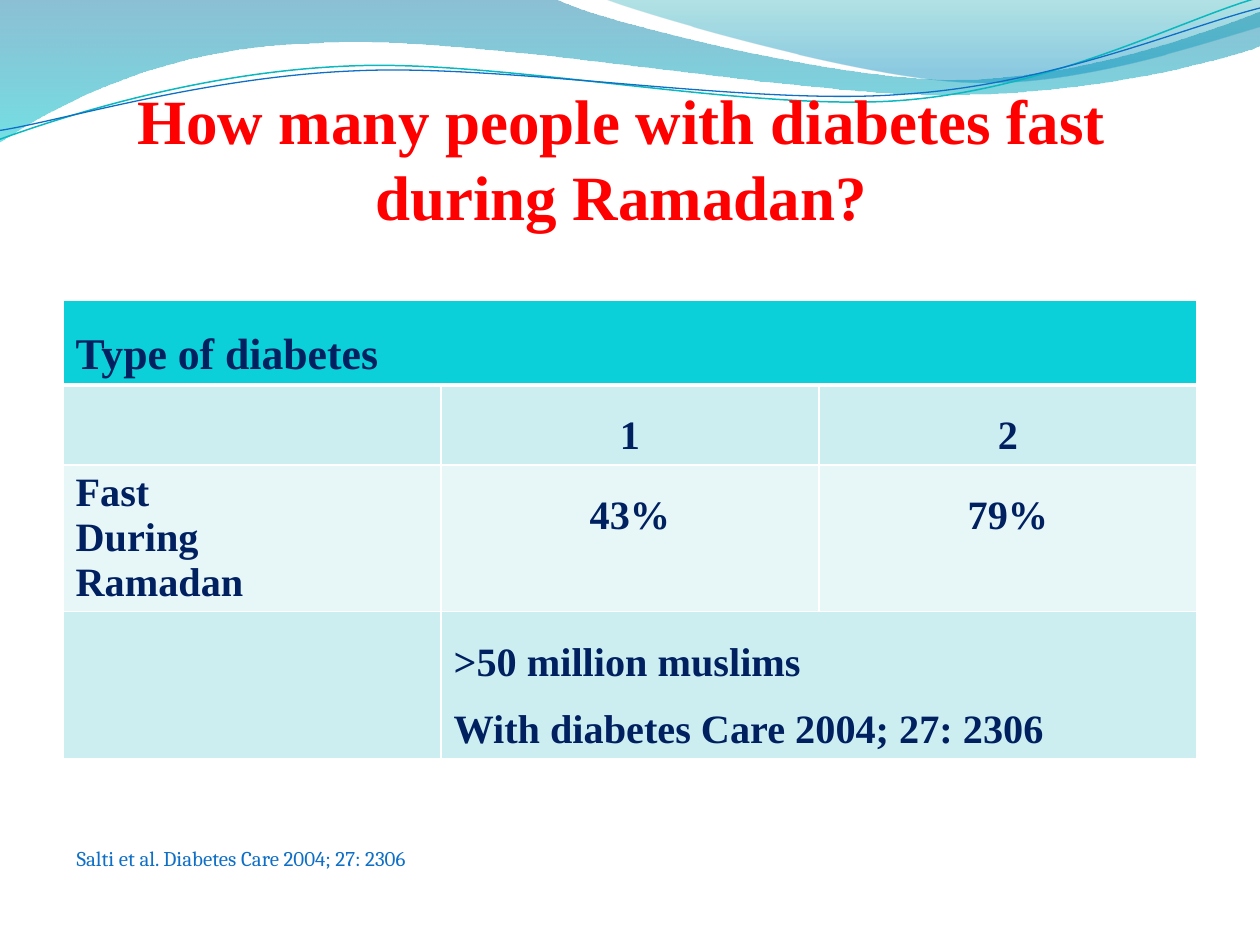
from lxml import etree
from pptx import Presentation
from pptx.dml.color import RGBColor
from pptx.enum.text import MSO_ANCHOR, MSO_AUTO_SIZE, PP_ALIGN
from pptx.oxml.ns import qn
from pptx.util import Inches, Pt

CENTER, LEFT = PP_ALIGN.CENTER, PP_ALIGN.LEFT
BOTTOM, FIXED = MSO_ANCHOR.BOTTOM, MSO_AUTO_SIZE.NONE
RED = RGBColor(0xFF, 0x00, 0x00)
NAVY = RGBColor(0x00, 0x20, 0x60)
BLUE = RGBColor(0x0F, 0x6F, 0xC6)
TEAL = RGBColor(0x0A, 0xB8, 0xBF)
CYAN = RGBColor(0x0B, 0xD0, 0xD9)
PALE = RGBColor(0xCC, 0xEE, 0xF1)
LIGHT = RGBColor(0xE7, 0xF7, 0xF8)
WHITE = RGBColor(0xFF, 0xFF, 0xFF)
DEEP = RGBColor(0x00, 0x74, 0xA1)
AQUA = RGBColor(0x00, 0xC6, 0xCF)
SEA = RGBColor(0x00, 0xA1, 0xA9)
SKY = RGBColor(0x00, 0x8B, 0xBF)
SERIF = "Times New Roman"
TILT = 357.3

BANDS = [
    ([(0, 0), (4.4, -0.01), (4.76, 0.17, 6.64, 0.63, 7.58, 0.63),
      (8.53, 0.63, 9.58, 0.26, 10, 0.09), (10.01, 0.36),
      (9.83, 0.44, 8.7, 0.76, 7.46, 0.75), (6.22, 0.75, 3.82, 0.28, 2.57, 0.34),
      (1.29, 0.36, 0.46, 0.83, -0.01, 1.13), (0, 0)],
     [(0, DEEP, 45), (100, AQUA, 55)]),
    ([(4.79, -0.01), (5.09, 0.11, 6.82, 0.62, 7.69, 0.65),
      (8.56, 0.69, 9.61, 0.32, 10, 0.21), (10, 0), (4.79, -0.01)],
     [(0, SEA, 30), (80, SKY, 45)]),
]
CURVES = [
    ([(-0.02, 0.87), (0.47, 0.72, 1.58, 0.41, 2.78, 0.42),
      (3.96, 0.42, 5.91, 0.93, 7.12, 0.9), (8.32, 0.87, 9.4, 0.36, 10, 0.22)],
     TEAL, 0.85),
    ([(-0.02, 0.8), (0.46, 0.75, 1.64, 0.45, 2.83, 0.46),
      (4.03, 0.46, 5.96, 0.89, 7.16, 0.85), (8.35, 0.83, 9.42, 0.42, 10.02, 0.3)],
     BLUE, 0.75),
]
ROWS = [
    (CYAN, 25, ["Type of diabetes", "", ""]),
    (PALE, 23, ["", "1", "2"]),
    (LIGHT, 23, ["Fast\nDuring\nRamadan", "43%", "79%"]),
    (PALE, 23, ["", ">50 million muslims\nWith diabetes Care 2004; 27: 2306", ""]),
]


def outline(slide, left, top, parts, close):
    """Draw a path whose six-number parts are Bezier curves."""
    first, *rest = [(Inches(x), Inches(y)) for part in parts
                    for x, y in zip(part[::2], part[1::2])]
    pen = slide.shapes.build_freeform(*first)
    pen.add_line_segments(rest, close=close)
    shape = pen.convert_to_shape(Inches(left), Inches(top))
    shape.shadow.inherit = False
    lines = iter(list(shape._element.iter(qn("a:lnTo"))))
    for part in parts[1:]:
        line = next(lines)
        if len(part) == 6:
            bend = etree.Element(qn("a:cubicBezTo"))
            line.addprevious(bend)
            for piece in (line, next(lines), next(lines)):
                bend.append(piece[0])
                piece.getparent().remove(piece)
    return shape


def shade(shape, stops):
    """Fill a shape from top to bottom with see-through colours."""
    shape.fill.background()
    old = shape._element.spPr.find(qn("a:noFill"))
    grad = etree.Element(qn("a:gradFill"), rotWithShape="1")
    group = etree.SubElement(grad, qn("a:gsLst"))
    for place, color, alpha in stops:
        stop = etree.SubElement(group, qn("a:gs"), pos=str(place * 1000))
        tint = etree.SubElement(stop, qn("a:srgbClr"), val=str(color))
        etree.SubElement(tint, qn("a:alpha"), val=str(alpha * 1000))
    etree.SubElement(grad, qn("a:lin"), ang="5400000", scaled="0")
    old.getparent().replace(old, grad)


def add_waves(slide, left, top):
    """Draw the bands and thin curves along the top edge."""
    for parts, stops in BANDS:
        band = outline(slide, left, top, parts, True)
        shade(band, stops)
        band.line.fill.background()
    for parts, color, width in CURVES:
        curve = outline(slide, left, top, parts, False)
        curve.rotation = TILT
        curve.fill.background()
        curve.line.color.rgb = color
        curve.line.width = Pt(width)


def style(para, size, color, name, bold):
    """Set the font of every run in a paragraph."""
    for run in para.runs:
        font = run.font
        font.size, font.name, font.bold = Pt(size), name, bold
        font.color.rgb = color


def add_title(slide, left, top, width, height):
    """Place the title in front of the waves."""
    title = slide.shapes.title
    title.left, title.top = Inches(left), Inches(top)
    title.width, title.height = Inches(width), Inches(height)
    frame = title.text_frame
    frame.text = "How many people with diabetes fast during Ramadan?"
    frame.auto_size, frame.vertical_anchor = FIXED, BOTTOM
    frame.margin_left = frame.margin_right = frame.margin_bottom = 0
    para = frame.paragraphs[0]
    para.alignment = CENTER
    style(para, 36, RED, SERIF, True)
    slide.shapes._spTree.append(title._element)


def edge(cell, over, under):
    """Draw white cell borders, with the given widths above and below."""
    props = cell._tc.get_or_add_tcPr()
    for spot, (side, width) in enumerate(
            [("L", 1), ("R", 1), ("T", over), ("B", under)]):
        line = etree.Element(qn(f"a:ln{side}"), w=str(Pt(width)))
        fill = etree.SubElement(line, qn("a:solidFill"))
        etree.SubElement(fill, qn("a:srgbClr"), val=str(WHITE))
        props.insert(spot, line)


def add_grid(slide, left, top, width, height):
    """Place the table of fasting rates by type of diabetes."""
    holder = slide.shapes.add_table(len(ROWS), 3, Inches(left), Inches(top),
                                    Inches(width), Inches(height))
    table = holder.table
    for r, (color, size, words) in enumerate(ROWS):
        table.rows[r].height = Inches(0.41)
        for c, text in enumerate(words):
            cell = table.cell(r, c)
            cell.fill.solid()
            cell.fill.fore_color.rgb = color
            edge(cell, 3 if r == 1 else 1, 3 if r == 0 else 1)
            if not text:
                continue
            cell.text = text
            for para in cell.text_frame.paragraphs:
                para.alignment = CENTER if c and r < 3 else LEFT
                para.line_spacing = 1.0 if (r, c) == (2, 0) else 1.5
                style(para, size, NAVY, SERIF, True)
    table.cell(0, 0).merge(table.cell(0, 2))
    table.cell(3, 1).merge(table.cell(3, 2))
    holder.height = Inches(height)


def add_source(slide, left, top, width, height):
    """Place the line that cites the study."""
    box = slide.shapes.add_textbox(Inches(left), Inches(top),
                                   Inches(width), Inches(height))
    frame = box.text_frame
    frame.word_wrap = True
    frame.text = "Salti et al. Diabetes Care 2004; 27: 2306"
    style(frame.paragraphs[0], 12, BLUE, "Cambria", False)


def main():
    """Build the slide and save it."""
    deck = Presentation()
    deck.slide_width, deck.slide_height = Inches(10), Inches(7.5)
    slide = deck.slides.add_slide(deck.slide_layouts[5])
    add_waves(slide, 0, 0)
    add_title(slide, 0.43, 0.6, 9, 1.25)
    add_grid(slide, 0.5, 2.38, 9, 3.9)
    add_source(slide, 0.51, 6.66, 8.03, 0.3)
    deck.save("out.pptx")


if __name__ == "__main__":
    main()
